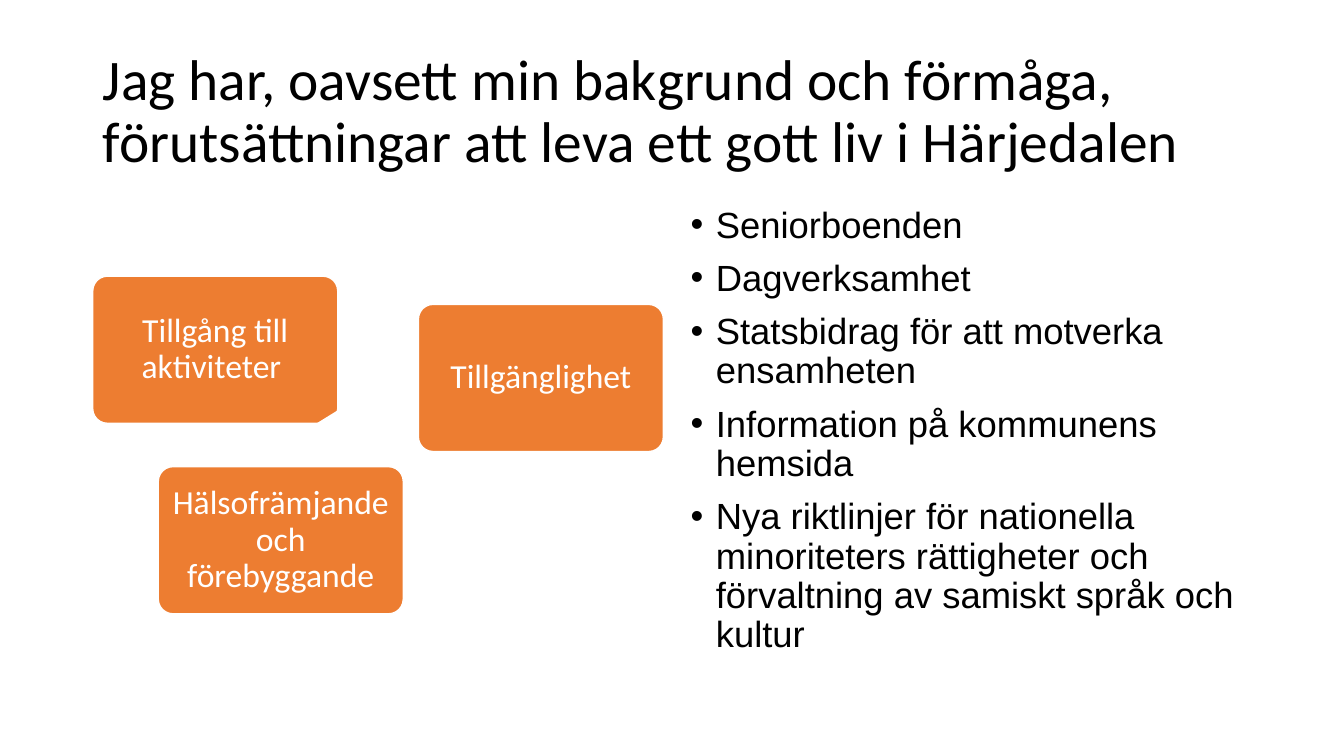
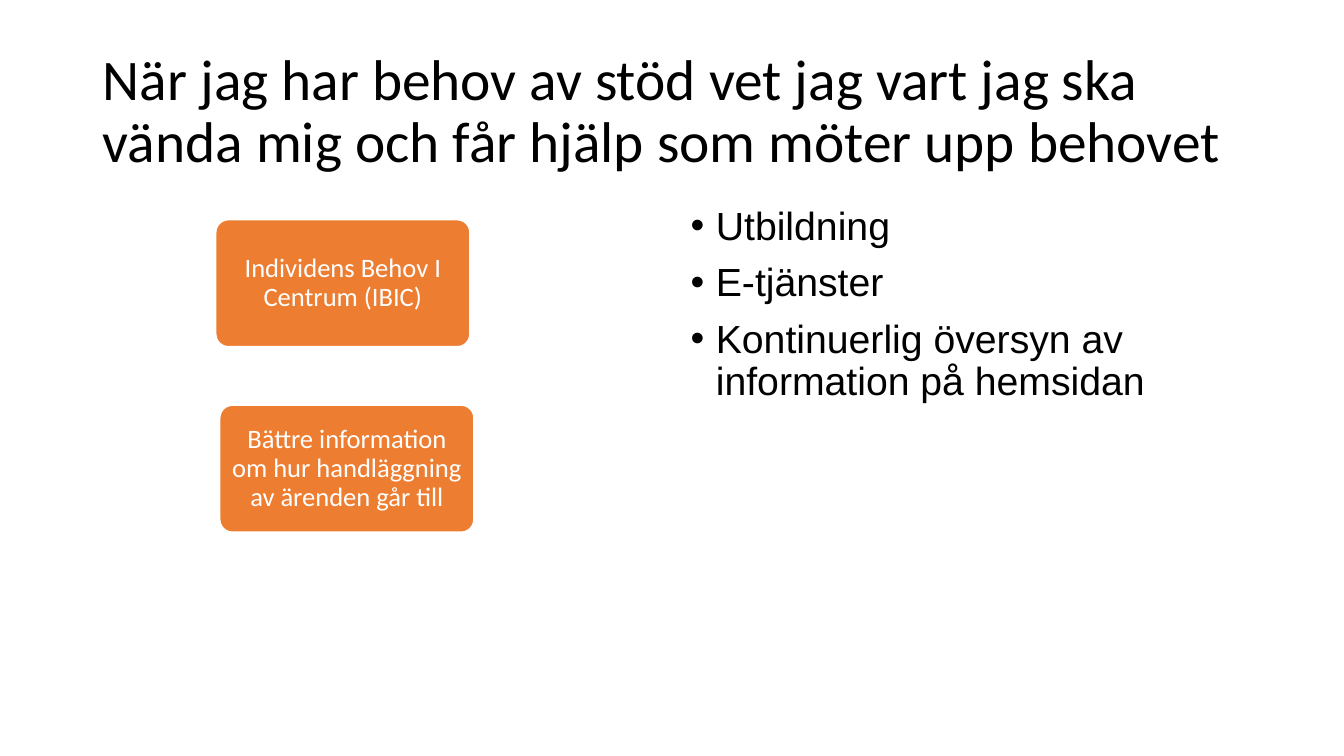
from lxml import etree
from pptx import Presentation
from pptx.dml.color import RGBColor
from pptx.enum.shapes import MSO_SHAPE as Shape
from pptx.enum.text import MSO_ANCHOR as Anchor, MSO_AUTO_SIZE as AutoSize, PP_ALIGN as Align
from pptx.oxml.ns import qn
from pptx.util import Inches, Pt

BLACK, WHITE, ORANGE = "000000", "FFFFFF", "ED7D31"
TITLE_AREA = (0.92, 0.4, 11.5, 1.45)
LIST_AREA = (6.75, 2, 5.67, 4.76)
LINE_SPACING = 0.9
BOX_MARGIN = 0.07

SLIDES = [
    {
        "title": "Jag har, oavsett min bakgrund och förmåga, "
                 "förutsättningar att leva ett gott liv i Härjedalen",
        "bullets": [
            "Seniorboenden",
            "Dagverksamhet",
            "Statsbidrag för att motverka ensamheten",
            "Information på kommunens hemsida",
            "Nya riktlinjer för nationella minoriteters rättigheter och "
            "förvaltning av samiskt språk och kultur",
        ],
        "bullet_size": 26,
        "box_size": (2.43, 1.46),
        "box_font_size": 24,
        "boxes": [
            ("Tillgång till aktiviteter ", 0.92, 2.74),
            ("Hälsofrämjande och förebyggande", 1.57, 4.63),
            ("Tillgänglighet", 4.15, 3.02),
        ],
        "band": (1.85, 4.08, 3.03, 0.22),
        "band_rotation": 328.2,
    },
    {
        "title": "När jag har behov av stöd vet jag vart jag ska vända mig "
                 "och får hjälp som möter upp behovet",
        "bullets": [
            "Utbildning",
            "E-tjänster",
            "Kontinuerlig översyn av information på hemsidan",
        ],
        "bullet_size": 28,
        "box_size": (2.52, 1.26),
        "box_font_size": 19,
        "boxes": [
            ("Individens Behov I Centrum (IBIC)", 2.14, 2.18),
            ("Bättre information om hur handläggning av ärenden går till", 2.18, 4.02),
        ],
    },
]


def color(value):
    return RGBColor.from_string(value)


def place(shape, area):
    shape.left, shape.top, shape.width, shape.height = map(Inches, area)


def format_paragraph(paragraph, font_name, size, font_color, align=Align.LEFT):
    paragraph.alignment = align
    paragraph.line_spacing = LINE_SPACING
    for run in paragraph.runs:
        run.font.name = font_name
        run.font.size = Pt(size)
        run.font.color.rgb = color(font_color)


def add_bullet(paragraph):
    properties = paragraph._p.get_or_add_pPr()
    properties.set("marL", str(Inches(0.25)))
    properties.set("indent", str(-Inches(0.25)))
    etree.SubElement(properties, qn("a:buFont")).set("typeface", "Arial")
    etree.SubElement(properties, qn("a:buChar")).set("char", "•")


def fill_title(title, text):
    place(title, TITLE_AREA)
    frame = title.text_frame
    frame.text = text
    frame.auto_size = AutoSize.NONE
    frame.vertical_anchor = Anchor.MIDDLE
    format_paragraph(frame.paragraphs[0], "Calibri", 41, BLACK)


def fill_list(body, bullets, size):
    place(body, LIST_AREA)
    frame = body.text_frame
    frame.text = "\n".join(bullets)
    frame.auto_size = AutoSize.NONE
    for index, paragraph in enumerate(frame.paragraphs):
        add_bullet(paragraph)
        paragraph.space_before = Pt(10 if index else 0)
        format_paragraph(paragraph, "Arial", size, BLACK)


def add_filled_shape(slide, preset, area, fill):
    shape = slide.shapes.add_shape(preset, *map(Inches, area))
    shape.shadow.inherit = False
    shape.fill.solid()
    shape.fill.fore_color.rgb = color(fill)
    return shape


def add_box(slide, text, area, size):
    box = add_filled_shape(slide, Shape.ROUNDED_RECTANGLE, area, ORANGE)
    box.adjustments[0] = 0.1
    box.line.color.rgb = color(WHITE)
    box.line.width = Pt(1)
    frame = box.text_frame
    frame.text = text
    frame.word_wrap = True
    frame.vertical_anchor = Anchor.MIDDLE
    frame.margin_left = frame.margin_right = Inches(BOX_MARGIN)
    frame.margin_top = frame.margin_bottom = Inches(BOX_MARGIN)
    format_paragraph(frame.paragraphs[0], "Calibri", size, WHITE, Align.CENTER)


def add_band(slide, area, rotation):
    band = add_filled_shape(slide, Shape.RECTANGLE, area, WHITE)
    band.line.fill.background()
    band.rotation = rotation


def build_slide(presentation, content):
    slide = presentation.slides.add_slide(presentation.slide_layouts[1])
    fill_title(slide.shapes.title, content["title"])
    fill_list(slide.placeholders[1], content["bullets"], content["bullet_size"])
    for index, (text, left, top) in enumerate(content["boxes"]):
        add_box(slide, text, (left, top, *content["box_size"]), content["box_font_size"])
        if index == 0 and "band" in content:
            add_band(slide, content["band"], content["band_rotation"])


def main():
    presentation = Presentation()
    presentation.slide_width = Inches(13.33)
    presentation.slide_height = Inches(7.5)
    for content in SLIDES:
        build_slide(presentation, content)
    presentation.save("out.pptx")


if __name__ == "__main__":
    main()
